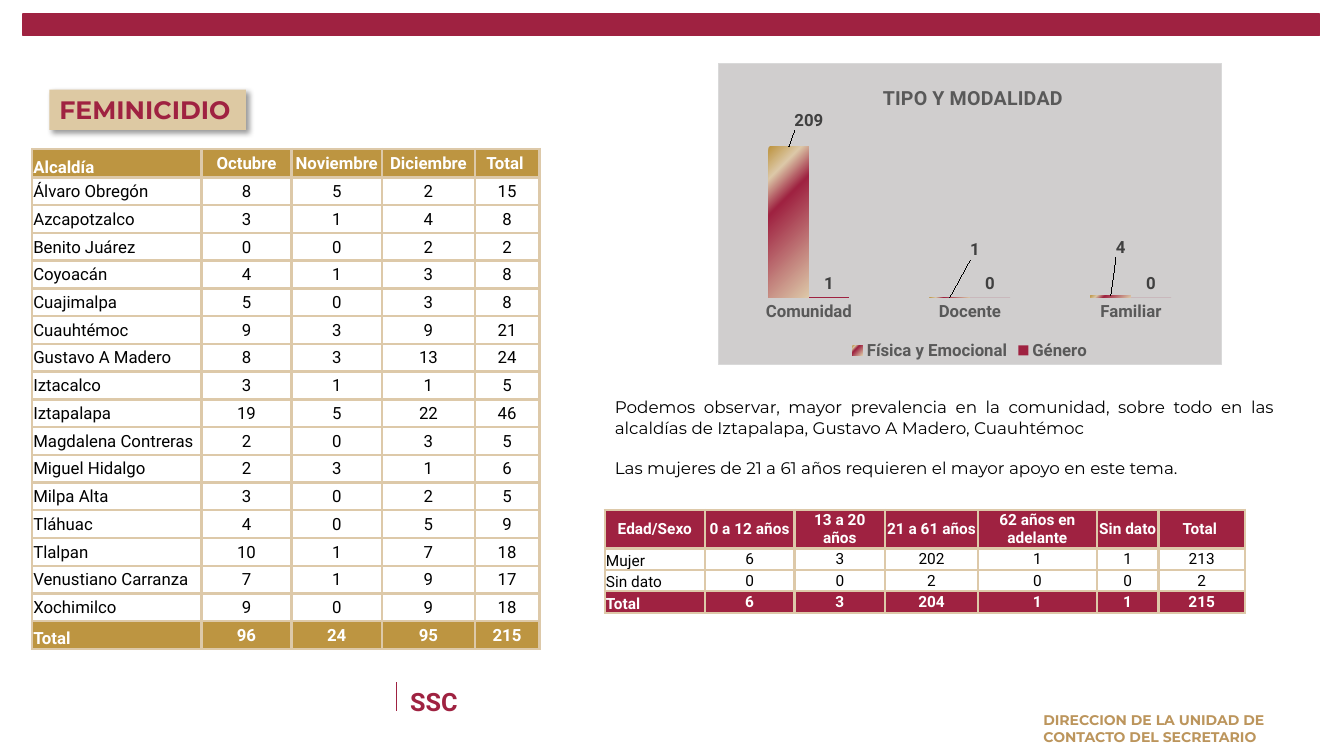
from dataclasses import dataclass
from pptx import Presentation
from pptx import util as u
from pptx.chart.data import CategoryChartData
from pptx.dml.color import RGBColor
from pptx.enum import chart as ch, shapes, text
from pptx.oxml import parse_xml
from pptx.oxml.ns import nsdecls, qn


@dataclass(frozen=True)
class Theme:
    wine: str = "9F2241"
    gold: str = "BD9541"
    sand: str = "DDC9A9"
    tag: str = "DDC9A3"
    footer: str = "BC955C"
    panel: str = "D0CECE"
    panel_edge: str = "D9D9D9"
    axis: str = "595959"
    value: str = "404040"
    white: str = "FFFFFF"
    black: str = "000000"
    heading: int = 18
    chart_title: int = 14
    body: int = 12
    small: int = 11
    foot: int = 10
    sans: str = "Roboto"
    display: str = "Montserrat"


T = Theme()
EMU_PER_PX = 9144
LEFT, CENTER, JUSTIFY = text.PP_ALIGN.LEFT, text.PP_ALIGN.CENTER, text.PP_ALIGN.JUSTIFY
MIDDLE, BOTTOM = text.MSO_ANCHOR.MIDDLE, text.MSO_ANCHOR.BOTTOM

ALCALDIAS = [
    ("Alcaldía", "Octubre", "Noviembre", "Diciembre", "Total "),
    ("Álvaro Obregón", 8, 5, 2, 15),
    ("Azcapotzalco", 3, 1, 4, 8),
    ("Benito Juárez", 0, 0, 2, 2),
    ("Coyoacán", 4, 1, 3, 8),
    ("Cuajimalpa", 5, 0, 3, 8),
    ("Cuauhtémoc", 9, 3, 9, 21),
    ("Gustavo A Madero", 8, 3, 13, 24),
    ("Iztacalco", 3, 1, 1, 5),
    ("Iztapalapa", 19, 5, 22, 46),
    ("Magdalena Contreras", 2, 0, 3, 5),
    ("Miguel Hidalgo", 2, 3, 1, 6),
    ("Milpa Alta", 3, 0, 2, 5),
    ("Tláhuac", 4, 0, 5, 9),
    ("Tlalpan", 10, 1, 7, 18),
    ("Venustiano Carranza", 7, 1, 9, 17),
    ("Xochimilco", 9, 0, 9, 18),
    ("Total", 96, 24, 95, 215),
]
EDADES = [
    ("Edad/Sexo", "0 a 12 años", "13 a 20 años", "21 a 61 años",
     "62 años en adelante", "Sin dato", "Total "),
    ("Mujer", 6, 3, 202, 1, 1, 213),
    ("Sin dato", 0, 0, 2, 0, 0, 2),
    ("Total", 6, 3, 204, 1, 1, 215),
]


def px(length):
    return u.Emu(round(length * EMU_PER_PX))


def rgb(code):
    return RGBColor.from_string(code)


def style(font, size, color, bold=True, face=T.sans):
    font.size, font.bold, font.name = u.Pt(size), bold, face
    font.color.rgb = rgb(color)


def write(frame, lines, size, color, bold=True, face=T.sans, align=LEFT, gap=0):
    for i, line in enumerate(lines):
        paragraph = frame.paragraphs[0] if i == 0 else frame.add_paragraph()
        paragraph.alignment = align
        if i and gap:
            paragraph.space_before = u.Pt(gap)
        run = paragraph.add_run()
        run.text = line
        style(run.font, size, color, bold, face)


def add_text(slide, box, lines, *look, wrap=True, **options):
    frame = slide.shapes.add_textbox(*map(px, box)).text_frame
    frame.word_wrap = wrap
    frame.auto_size = text.MSO_AUTO_SIZE.NONE if wrap else text.MSO_AUTO_SIZE.SHAPE_TO_FIT_TEXT
    write(frame, lines, *look, **options)


def add_bar(slide, box, fill):
    bar = slide.shapes.add_shape(shapes.MSO_SHAPE.RECTANGLE, *map(px, box))
    bar.shadow.inherit = False
    bar.fill.solid()
    bar.fill.fore_color.rgb = rgb(fill)
    return bar


def add_heading(slide, box, label):
    tag = add_bar(slide, box, T.tag)
    tag.line.fill.background()
    tag._element.spPr.find(qn("a:effectLst")).append(parse_xml(
        f'<a:outerShdw {nsdecls("a")} blurRad="50800" dist="38100" dir="2700000" algn="tl"'
        ' rotWithShape="0"><a:srgbClr val="000000"><a:alpha val="40000"/></a:srgbClr></a:outerShdw>'))
    tag.text_frame.word_wrap = False
    tag.text_frame.auto_size = text.MSO_AUTO_SIZE.SHAPE_TO_FIT_TEXT
    write(tag.text_frame, [label], T.heading, T.wine, face=T.display)


def add_rule(slide, x, top, bottom):
    rule = slide.shapes.add_connector(shapes.MSO_CONNECTOR.STRAIGHT, *map(px, (x, top, x, bottom)))
    rule.line.color.rgb = rgb(T.wine)
    rule.line.width = u.Pt(0.75)
    rule._element.spPr.append(parse_xml(f'<a:effectLst {nsdecls("a")}/>'))


def border(cell):
    properties = cell._tc.get_or_add_tcPr()
    for i, side in enumerate(("lnL", "lnR", "lnT", "lnB")):
        properties.insert(i, parse_xml(
            f'<a:{side} {nsdecls("a")} w="25400"><a:solidFill><a:srgbClr val="{T.sand}"/>'
            f'</a:solidFill></a:{side}>'))


def add_grid(slide, box, rows, widths, header_height, band, size, corner, label_anchor):
    """Table with coloured first and last rows; corner is (alignment, anchor) of its first cell."""
    grid = slide.shapes.add_table(len(rows), len(widths), *map(px, box)).table
    grid.first_row = grid.horz_banding = False
    for column, width in zip(grid.columns, widths):
        column.width = px(width)
    row_height = (box[3] - header_height) / (len(rows) - 1)
    last = len(rows) - 1
    for r, values in enumerate(rows):
        grid.rows[r].height = px(row_height if r else header_height)
        banded = r in (0, last)
        for c, value in enumerate(values):
            cell = grid.cell(r, c)
            cell.margin_left = cell.margin_right = cell.margin_top = px(1)
            cell.margin_bottom = 0
            align, anchor = CENTER, MIDDLE
            if c == 0:
                align, anchor = corner if r == 0 else (LEFT, BOTTOM if r == last else label_anchor)
            cell.vertical_anchor = anchor
            if banded:
                cell.fill.solid()
                cell.fill.fore_color.rgb = rgb(band)
            else:
                cell.fill.background()
            border(cell)
            write(cell.text_frame, [str(value)], size, T.white if banded else T.black, banded, align=align)


def place(element, index, x, y, w=None, h=None, inner=False, absolute=True):
    """Give a chart part a manual layout, in fractions of the chart."""
    for old in element.findall(qn("c:layout")):
        element.remove(old)
    parts = [("layoutTarget", "inner")] if inner else []
    if absolute:
        parts += [("xMode", "edge"), ("yMode", "edge")]
    parts += [(k, v) for k, v in (("x", x), ("y", y), ("w", w), ("h", h)) if v is not None]
    body = "".join(f'<c:{k} val="{v}"/>' for k, v in parts)
    element.insert(index, parse_xml(
        f'<c:layout {nsdecls("c")}><c:manualLayout>{body}</c:manualLayout></c:layout>'))


def add_modality_chart(slide, box):
    data = CategoryChartData()
    data.categories = ["Comunidad", "Docente", "Familiar"]
    data.add_series("Física y Emocional", (209, 1, 4))
    data.add_series("Género", (1, 0, 0))
    chart = slide.shapes.add_chart(ch.XL_CHART_TYPE.COLUMN_CLUSTERED, *map(px, box), data).chart
    style(chart.font, T.body, T.black)
    write(chart.chart_title.text_frame, ["TIPO Y MODALIDAD"], T.chart_title, T.axis, align=CENTER)
    place(chart.chart_title._element, 1, 0.32, 0.06)
    chart.has_legend = True
    chart.legend.position = ch.XL_LEGEND_POSITION.BOTTOM
    chart.legend.include_in_layout = False
    style(chart.legend.font, T.body, T.axis)
    names, scale = chart.category_axis, chart.value_axis
    names.major_tick_mark = ch.XL_TICK_MARK.NONE
    names.format.line.fill.background()
    style(names.tick_labels.font, T.body, T.axis)
    scale.visible = scale.has_major_gridlines = False
    scale.minimum_scale, scale.maximum_scale = 0, 250
    plot = chart.plots[0]
    plot.gap_width, plot.overlap, plot.vary_by_categories = 200, 0, False
    for series in plot.series:
        series.format.fill.solid()
        series.format.fill.fore_color.rgb = rgb(T.wine)
        series.data_labels.show_value = True
        series.data_labels.position = ch.XL_LABEL_POSITION.OUTSIDE_END
        style(series.data_labels.font, T.body, T.value)
    physical = plot.series[0]
    stops = "".join(f'<a:gs pos="{at}000"><a:srgbClr val="{color}"/></a:gs>' for at, color in
                    ((0, T.sand), (64, T.wine), (83, T.sand), (100, T.gold)))
    properties = physical._element.spPr
    properties.replace(properties[0], parse_xml(
        f'<a:gradFill {nsdecls("a")}><a:gsLst>{stops}</a:gsLst><a:path path="circle">'
        '<a:fillToRect l="100000" t="100000"/></a:path></a:gradFill>'))
    for i, shift in enumerate(((0.04, -0.04), (0.05, -0.11), (0.02, -0.11))):
        label = physical.points[i].data_label
        style(label.font, T.body, T.value)
        label.position = ch.XL_LABEL_POSITION.OUTSIDE_END
        place(label._dLbl, 1, *shift, absolute=False)
    space = chart._chartSpace
    place(space.chart.plotArea, 0, 0.02, 0.18, 0.96, 0.6, inner=True)
    space.chart.addnext(parse_xml(
        f'<c:spPr {nsdecls("c", "a")}><a:solidFill><a:srgbClr val="{T.panel}"/></a:solidFill>'
        f'<a:ln w="9525"><a:solidFill><a:srgbClr val="{T.panel_edge}"/></a:solidFill></a:ln></c:spPr>'))


def main():
    deck = Presentation()
    deck.slide_width, deck.slide_height = px(1333), px(750)
    slide = deck.slides.add_slide(deck.slide_layouts[6])
    add_rule(slide, 393, 677, 705)
    add_text(slide, (397, 676, 75, 44), ["SSC"], T.heading, T.wine)
    add_text(slide, (1025, 701, 248, 35), ["DIRECCION DE LA UNIDAD DE", "CONTACTO DEL SECRETARIO"],
             T.foot, T.footer, face=T.display, wrap=False)
    band = add_bar(slide, (23, 14, 1286, 21), T.wine)
    band.line.color.rgb = rgb(T.wine)
    band.line.width = u.Pt(1)
    add_heading(slide, (49, 89, 195, 40), "FEMINICIDIO")
    add_text(slide, (600, 389, 674, 91), [
        "Podemos observar, mayor prevalencia en la comunidad, sobre todo en las alcaldías de "
        "Iztapalapa, Gustavo A Madero, Cuauhtémoc",
        "Las mujeres de 21 a 61 años requieren el mayor apoyo en este tema."],
        T.body, T.black, False, T.display, JUSTIFY, gap=14.6)
    add_grid(slide, (32, 148, 503, 496), ALCALDIAS, (168, 89, 90, 92, 64), 28,
             T.gold, T.body, (LEFT, BOTTOM), MIDDLE)
    add_grid(slide, (600, 506, 635, 102), EDADES, (99, 89, 90, 92, 118, 61, 86), 38,
             T.wine, T.small, (CENTER, MIDDLE), BOTTOM)
    add_modality_chart(slide, (712, 62, 500, 300))
    deck.save("out.pptx")


if __name__ == "__main__":
    main()
